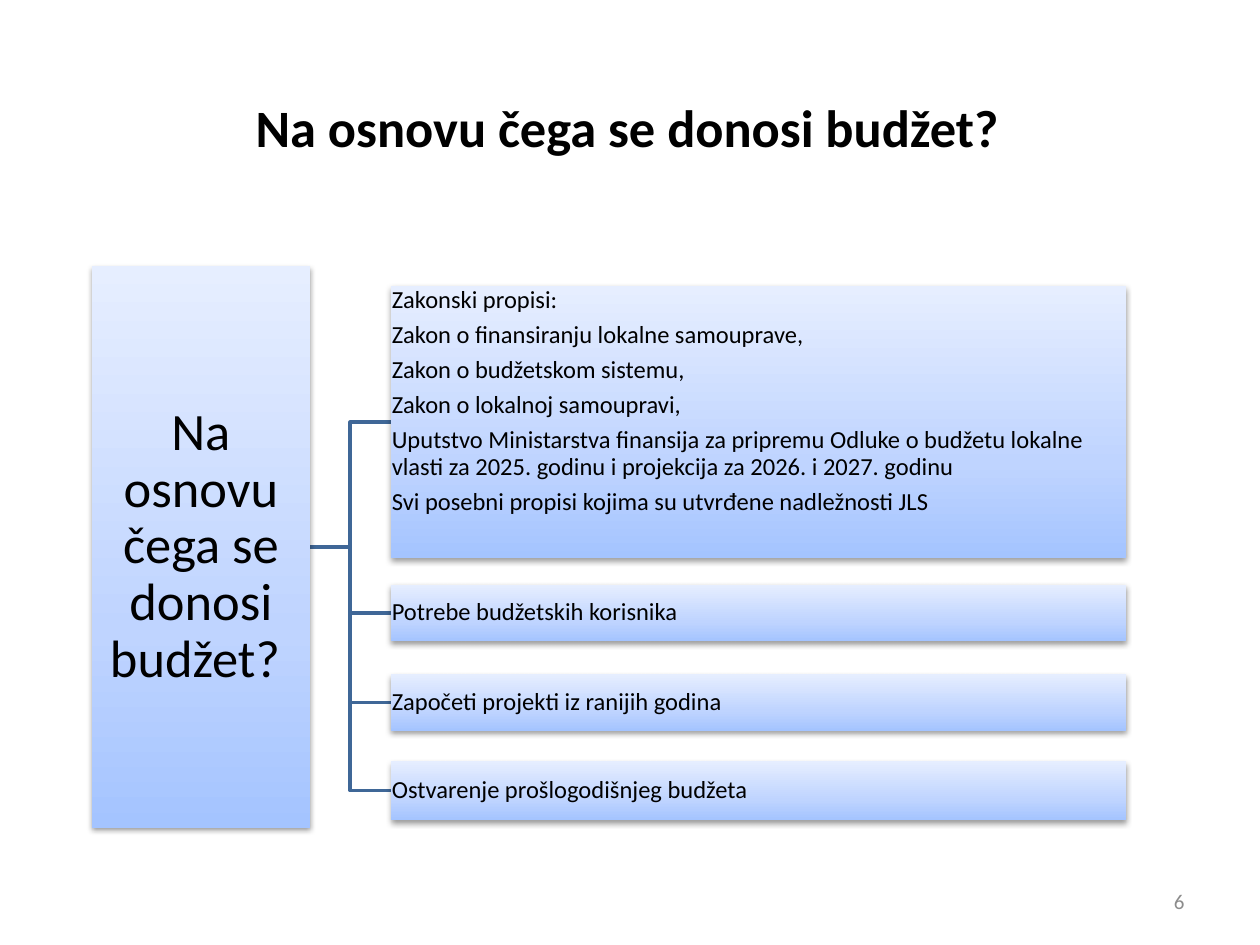
"""Build a budget slide: one question box branching to its four bases."""
import pptx
import pptx.dml.color
import pptx.enum.text
import pptx.oxml
import pptx.oxml.ns
import pptx.util
from pptx.util import Inches

RGBColor = pptx.dml.color.RGBColor
ALIGN = pptx.enum.text.PP_ALIGN
ANCHOR = pptx.enum.text.MSO_ANCHOR

BLACK = RGBColor(0x00, 0x00, 0x00)
GREY = RGBColor(0x8C, 0x8C, 0x8C)
BRANCH = RGBColor(0x3F, 0x67, 0x97)
GRADIENT = (
    (0, RGBColor(0xA4, 0xC4, 0xFF)),
    (35, RGBColor(0xBF, 0xD4, 0xFF)),
    (100, RGBColor(0xE6, 0xEE, 0xFF)),
)

QUESTION = "Na osnovu čega se donosi budžet?"
QUESTION_BOX = (0.73, 2.11, 1.73, 4.46)
BASIS_LEFT, BASIS_WIDTH = 3.1, 5.84
BASES = (
    (2.27, 2.16, ANCHOR.TOP, (
        "Zakonski propisi:",
        "Zakon o finansiranju lokalne samouprave,",
        "Zakon o budžetskom sistemu,",
        "Zakon o lokalnoj samoupravi,",
        "Uputstvo Ministarstva finansija za pripremu Odluke o budžetu lokalne "
        "vlasti za 2025. godinu i projekcija za 2026. i 2027. godinu",
        "Svi posebni propisi kojima su utvrđene nadležnosti JLS",
    )),
    (4.64, 0.45, ANCHOR.MIDDLE, ("Potrebe budžetskih korisnika",)),
    (5.35, 0.45, ANCHOR.MIDDLE, ("Započeti projekti iz ranijih godina",)),
    (6.04, 0.47, ANCHOR.MIDDLE, ("Ostvarenje prošlogodišnjeg budžeta",)),
)


def apply_format(target, values):
    """Set each named attribute on the target."""
    for name, value in values.items():
        setattr(target, name, value)


def write_text(frame, lines, size, align, frame_format, para_format=None,
               color=BLACK, bold=False):
    """Fill a text frame with one formatted paragraph per line."""
    apply_format(frame, {"word_wrap": True, **frame_format})
    for index, line in enumerate(lines):
        para = frame.add_paragraph() if index else frame.paragraphs[0]
        apply_format(para, {"alignment": align, **(para_format or {})})
        span = para.add_run()
        span.text = line
        apply_format(span.font, {"name": "Calibri", "bold": bold,
                                 "size": pptx.util.Pt(size)})
        span.font.color.rgb = color


def add_title(page, text):
    """Place and format the title placeholder."""
    title = page.shapes.title
    apply_format(title, {"left": Inches(0.48), "top": Inches(0.54),
                         "width": Inches(9), "height": Inches(0.93)})
    write_text(title.text_frame, [text], 30, ALIGN.CENTER,
               {"vertical_anchor": ANCHOR.MIDDLE}, bold=True)


def add_page_number(page, number):
    """Add the page number at the bottom right."""
    box = page.shapes.add_textbox(*map(Inches, (7.17, 6.95, 2.33, 0.4)))
    write_text(box.text_frame, [number], 12, ALIGN.RIGHT,
               {"vertical_anchor": ANCHOR.MIDDLE}, color=GREY)


def style_box(box):
    """Give a box its vertical gradient and soft shadow."""
    namespace = pptx.oxml.ns.nsdecls("a")
    box.line.fill.background()
    box.shadow.inherit = False
    stops = "".join(
        f'<a:gs pos="{place * 1000}"><a:srgbClr val="{color}"/></a:gs>'
        for place, color in GRADIENT)
    properties = box.element.spPr
    properties.insert(2, pptx.oxml.parse_xml(
        f'<a:gradFill {namespace} rotWithShape="1"><a:gsLst>{stops}</a:gsLst>'
        '<a:lin ang="16200000" scaled="0"/></a:gradFill>'))
    effects = properties.find(pptx.oxml.ns.qn("a:effectLst"))
    effects.append(pptx.oxml.parse_xml(
        f'<a:outerShdw {namespace} blurRad="40000" dist="20000" dir="5400000" '
        'rotWithShape="0"><a:srgbClr val="000000"><a:alpha val="38000"/>'
        '</a:srgbClr></a:outerShdw>'))


def add_box(page, bounds, lines, size, align, anchor, inset):
    """Add a shaded rectangle with text."""
    box = page.shapes.add_shape(
        pptx.enum.shapes.MSO_SHAPE.RECTANGLE, *map(Inches, bounds))
    style_box(box)
    margins = {f"margin_{side}": Inches(inset)
               for side in ("left", "top", "right", "bottom")}
    spacing = {"line_spacing": 0.9, "space_after": pptx.util.Pt(size * 0.35)}
    write_text(box.text_frame, lines, size, align,
               {"vertical_anchor": anchor, **margins}, spacing)


def add_branch(page, start, end):
    """Draw an elbow line between two points."""
    middle = (start[0] + end[0]) / 2
    points = [(Inches(x), Inches(y)) for x, y in (
        start, (middle, start[1]), (middle, end[1]), end)]
    builder = page.shapes.build_freeform(*points[0])
    builder.add_line_segments(points[1:], close=False)
    branch = builder.convert_to_shape()
    branch.fill.background()
    branch.line.color.rgb = BRANCH
    branch.line.width = pptx.util.Pt(2)
    branch.shadow.inherit = False


def main():
    """Build and save the deck."""
    deck = pptx.Presentation()
    apply_format(deck, {"slide_width": Inches(10), "slide_height": Inches(7.5)})
    page = deck.slides.add_slide(deck.slide_layouts[5])
    add_title(page, QUESTION)
    add_page_number(page, "6")

    left, top, width, height = QUESTION_BOX
    start = (left + width, top + height / 2)
    for basis_top, basis_height, _, _ in reversed(BASES):
        add_branch(page, start, (BASIS_LEFT, basis_top + basis_height / 2))

    add_box(page, QUESTION_BOX, [QUESTION + " "], 30, ALIGN.CENTER,
            ANCHOR.MIDDLE, 0.02)
    for basis_top, basis_height, anchor, lines in BASES:
        add_box(page, (BASIS_LEFT, basis_top, BASIS_WIDTH, basis_height),
                lines, 14, ALIGN.LEFT, anchor, 0.01)
    deck.save("out.pptx")


if __name__ == "__main__":
    main()
